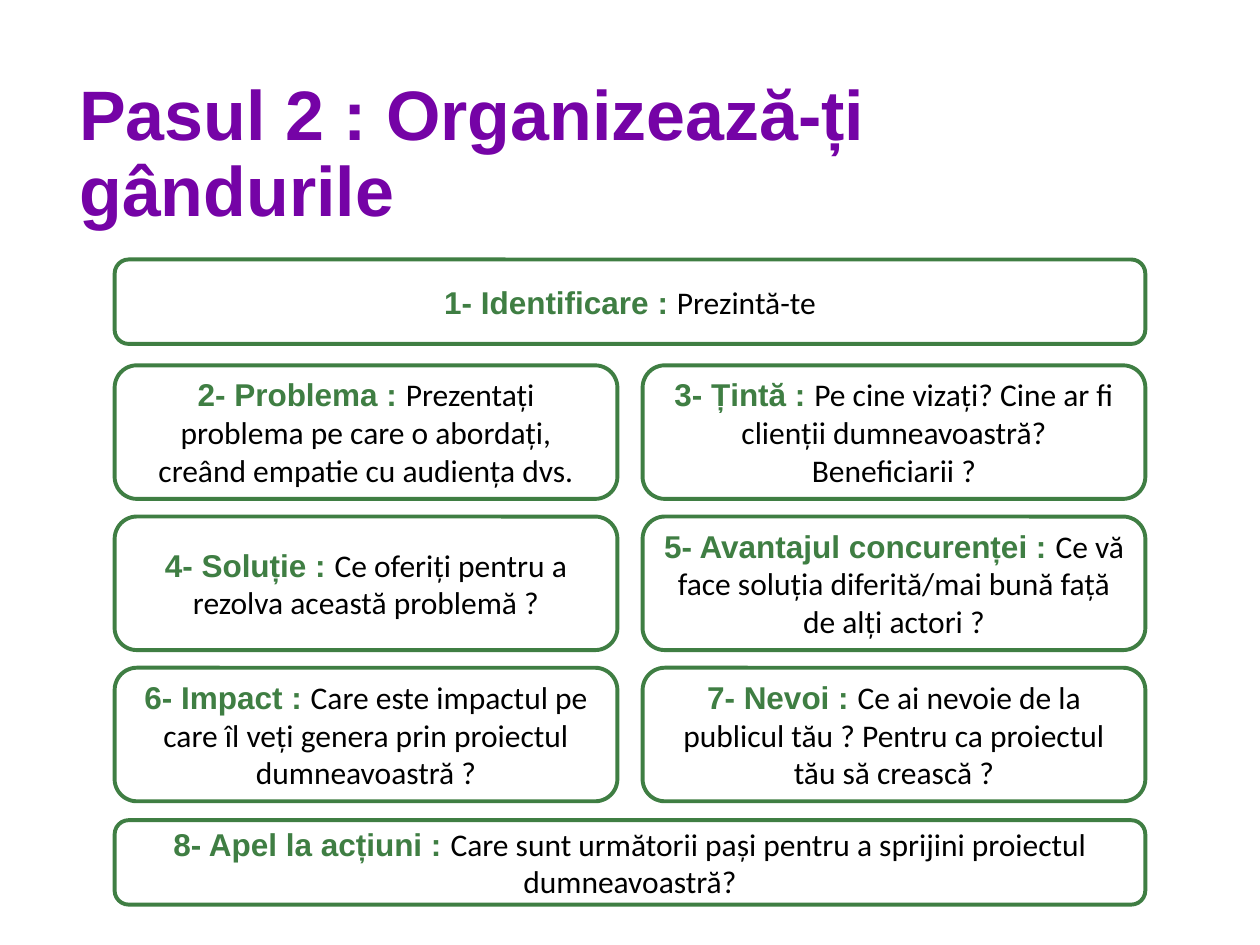
from dataclasses import dataclass

from pptx import Presentation
from pptx.dml.color import RGBColor
from pptx.enum.shapes import MSO_SHAPE
from pptx.enum.text import MSO_ANCHOR, PP_ALIGN
from pptx.slide import Slide
from pptx.util import Inches, Pt

COLORS = {"title": "7503A6", "step": "3F7E43", "detail": "000000"}

FORMATS = {
    "title": {"name": "Arial", "size": Pt(40), "bold": True},
    "step": {"name": "Arial", "size": Pt(18), "bold": True},
    "detail": {"name": "Calibri", "size": Pt(18), "bold": False},
}

LEFT, GRID_TOP = 0.91, 2.9
CARD_WIDTH, CARD_HEIGHT = 3.99, 1.06
COLUMN_PITCH, ROW_PITCH = 4.19, 1.2
BANNER_WIDTH, BANNER_HEIGHT = COLUMN_PITCH + CARD_WIDTH, 0.67


@dataclass
class Step:
    heading: str
    detail: str


@dataclass
class Frame:
    left: float
    top: float
    width: float
    height: float


OPENING = Step("1- Identificare :", "Prezintă-te")
CLOSING = Step(
    "8- Apel la acțiuni :",
    "Care sunt următorii pași pentru a sprijini proiectul dumneavoastră?",
)
GRID_STEPS = [
    Step("2- Problema :", "Prezentați problema pe care o abordați, creând empatie cu audiența dvs."),
    Step("3- Țintă :", "Pe cine vizați? Cine ar fi clienții dumneavoastră? Beneficiarii ?"),
    Step("4- Soluție :", "Ce oferiți pentru a rezolva această problemă ?"),
    Step("5- Avantajul concurenței :", "Ce vă face soluția diferită/mai bună față de alți actori ?"),
    Step("6- Impact :", "Care este impactul pe care îl veți genera prin proiectul dumneavoastră ?"),
    Step("7- Nevoi :", "Ce ai nevoie de la publicul tău ? Pentru ca proiectul tău să crească ?"),
]


def add_span(para, text: str, style: str) -> None:
    span = para.add_run()
    span.text = text
    for attribute, value in FORMATS[style].items():
        setattr(span.font, attribute, value)
    span.font.color.rgb = RGBColor.from_string(COLORS[style])


def place_title(page: Slide, text: str) -> None:
    title = page.shapes.title
    title.left, title.top = Inches(0.53), Inches(0.51)
    title.width, title.height = Inches(7.11), Inches(1.45)
    title.text_frame.vertical_anchor = MSO_ANCHOR.MIDDLE
    title.text_frame.word_wrap = True
    para = title.text_frame.paragraphs[0]
    para.alignment = PP_ALIGN.LEFT
    para.line_spacing = 0.9
    add_span(para, text, "title")


def draw_step(page: Slide, step: Step, frame: Frame) -> None:
    box = page.shapes.add_shape(
        MSO_SHAPE.ROUNDED_RECTANGLE,
        Inches(frame.left),
        Inches(frame.top),
        Inches(frame.width),
        Inches(frame.height),
    )
    box.shadow.inherit = False
    box.fill.background()
    box.line.color.rgb = RGBColor.from_string(COLORS["step"])
    box.line.width = Pt(2.25)
    box.text_frame.word_wrap = True
    box.text_frame.vertical_anchor = MSO_ANCHOR.MIDDLE
    para = box.text_frame.paragraphs[0]
    para.alignment = PP_ALIGN.CENTER
    add_span(para, f"{step.heading} ", "step")
    add_span(para, step.detail, "detail")


def main() -> None:
    deck = Presentation()
    deck.slide_width, deck.slide_height = Inches(10), Inches(7.5)
    page = deck.slides.add_slide(deck.slide_layouts[5])
    place_title(page, "Pasul 2 : Organizează-ți gândurile")

    draw_step(page, OPENING, Frame(LEFT, 2.06, BANNER_WIDTH, BANNER_HEIGHT))
    for index, step in enumerate(GRID_STEPS):
        row, column = divmod(index, 2)
        left = LEFT + column * COLUMN_PITCH
        top = GRID_TOP + row * ROW_PITCH
        draw_step(page, step, Frame(left, top, CARD_WIDTH, CARD_HEIGHT))
    draw_step(page, CLOSING, Frame(LEFT, 6.51, BANNER_WIDTH, BANNER_HEIGHT))

    deck.save("out.pptx")


if __name__ == "__main__":
    main()
